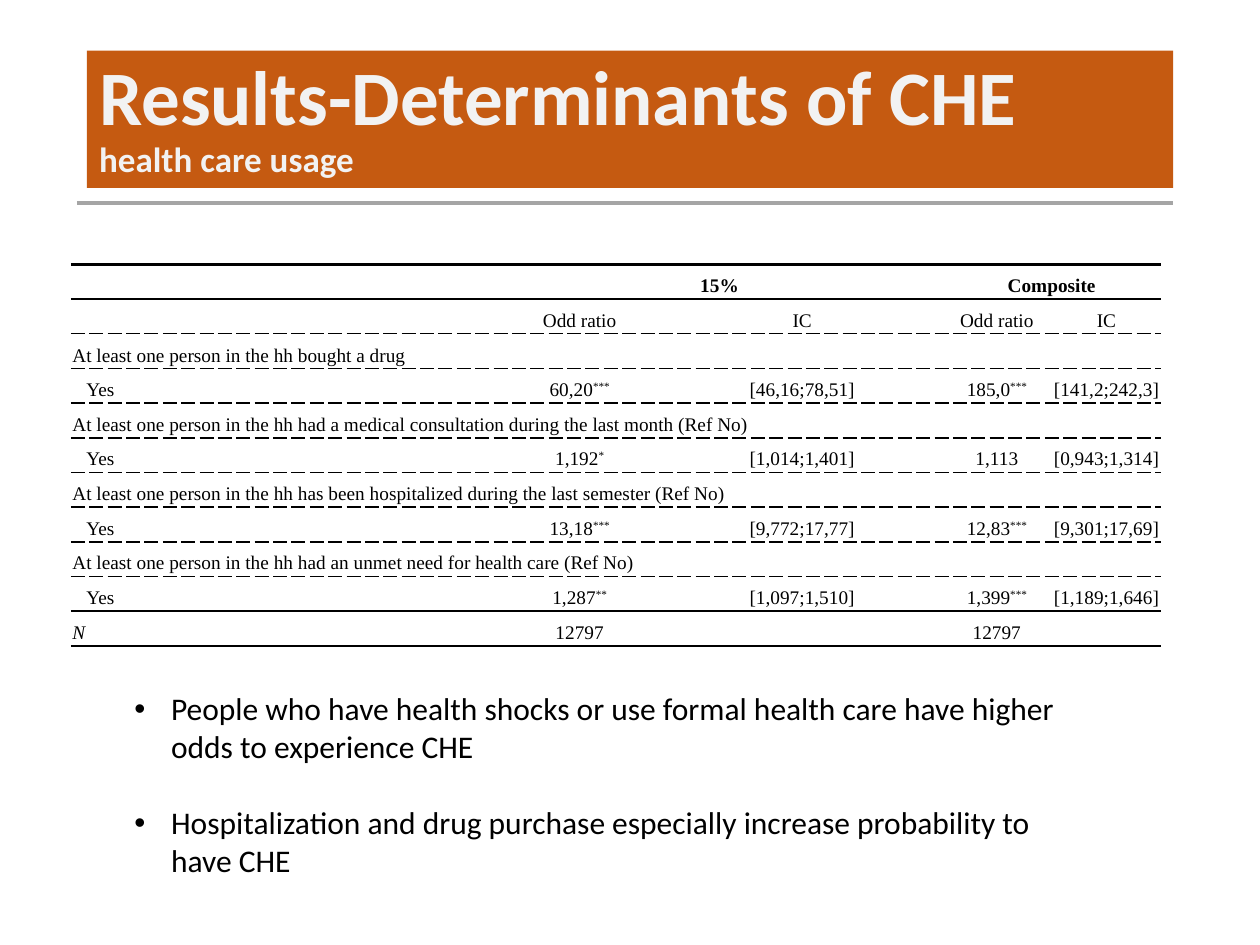
from lxml import etree
from pptx import Presentation
from pptx import util as u
from pptx.dml.color import RGBColor
from pptx.enum import shapes, text
from pptx.oxml import ns

COLORS = {"orange": "C55A11", "title": "F2F2F2", "rule": "A5A5A5", "ink": "000000"}


def style_font(font, size, name, color, bold=False):
    font.size = u.Pt(size)
    font.name = name
    font.bold = bold
    font.color.rgb = RGBColor.from_string(COLORS[color])


def add_border(cell, side, width, dash):
    properties = cell._tc.get_or_add_tcPr()
    line = etree.SubElement(properties, ns.qn(f"a:ln{side}"), w=str(u.Pt(width)))
    fill = etree.SubElement(line, ns.qn("a:solidFill"))
    etree.SubElement(fill, ns.qn("a:srgbClr"), val=COLORS["ink"])
    etree.SubElement(line, ns.qn("a:prstDash"), val=dash)


presentation = Presentation()
presentation.slide_width = u.Cm(25.4)
presentation.slide_height = u.Cm(19.05)
slide = presentation.slides.add_slide(presentation.slide_layouts[6])

# Rule under the title
rule = slide.shapes.add_connector(
    shapes.MSO_CONNECTOR.STRAIGHT, u.Cm(1.55), u.Cm(4.09), u.Cm(23.65), u.Cm(4.09))
rule.line.color.rgb = RGBColor.from_string(COLORS["rule"])
rule.line.width = u.Pt(2.25)
etree.SubElement(rule._element.spPr, ns.qn("a:effectLst"))

# Title band
title = slide.shapes.add_shape(
    shapes.MSO_SHAPE.RECTANGLE, u.Cm(1.75), u.Cm(1.02), u.Cm(21.9), u.Cm(2.77))
title.shadow.inherit = False
title.fill.solid()
title.fill.fore_color.rgb = RGBColor.from_string(COLORS["orange"])
title.line.fill.background()
title.text_frame.vertical_anchor = text.MSO_ANCHOR.MIDDLE
paragraph = title.text_frame.paragraphs[0]
paragraph.alignment = text.PP_ALIGN.LEFT
paragraph.line_spacing = 0.9
for words, size in [("Results-Determinants of CHE", 44), ("health care usage", 20)]:
    if paragraph.runs:
        paragraph.add_line_break()
    run = paragraph.add_run()
    run.text = words
    style_font(run.font, size, "Calibri", "title", bold=True)

# Table contents: stars after a number are raised
ROWS = [
    ["", "15%", "", "Composite", ""],
    ["", "Odd ratio", "IC", "Odd ratio", "IC"],
    ["At least one person in the hh bought a drug"],
    ["Yes", "60,20***", "[46,16;78,51]", "185,0***", "[141,2;242,3]"],
    ["At least one person in the hh had a medical consultation during the last month (Ref No)"],
    ["Yes", "1,192*", "[1,014;1,401]", "1,113", "[0,943;1,314]"],
    ["At least one person in the hh has been hospitalized during the last semester (Ref No)"],
    ["Yes", "13,18***", "[9,772;17,77]", "12,83***", "[9,301;17,69]"],
    ["At least one person in the hh had an unmet need for health care (Ref No)"],
    ["Yes", "1,287**", "[1,097;1,510]", "1,399***", "[1,189;1,646]"],
    ["N", "12797", "", "12797", ""],
]
COLUMN_WIDTHS = [8.59, 3.33, 5.64, 2.21, 2.21, 1.04]
ROW_HEIGHT = 0.7
DATA_COLUMNS = 5

# Horizontal rules, keyed by the row they stand above
RULES = {0: (2.25, "solid"), 1: (1, "solid"), 10: (1, "solid"), 11: (1, "solid")}
RULES.update({row: (1, "dash") for row in (2, 4, 6, 8)})

frame = slide.shapes.add_table(
    len(ROWS), len(COLUMN_WIDTHS), u.Cm(1.43), u.Cm(5.33),
    u.Cm(sum(COLUMN_WIDTHS)), u.Cm(ROW_HEIGHT * len(ROWS)))
table = frame.table
table.first_row = False
table.horz_banding = False
# "No Style, No Grid"
table._tbl.tblPr.find(ns.qn("a:tableStyleId")).text = "{2D5ABB26-0587-4C30-8999-92F81FD0307C}"
for column, width in zip(table.columns, COLUMN_WIDTHS):
    column.width = u.Cm(width)
for row in table.rows:
    row.height = u.Cm(ROW_HEIGHT)

# Header groups and full-width questions
for first in (1, 3):
    table.cell(0, first).merge(table.cell(0, first + 1))
for row, values in enumerate(ROWS):
    if len(values) == 1:
        table.cell(row, 0).merge(table.cell(row, DATA_COLUMNS - 1))

# Cells
for row, values in enumerate(ROWS):
    for column in range(len(COLUMN_WIDTHS)):
        cell = table.cell(row, column)
        value = values[column] if column < len(values) else ""
        cell.margin_left = u.Cm(0.31 if value == "Yes" else 0.03)
        cell.margin_right = u.Cm(0.03)
        cell.margin_top = cell.margin_bottom = 0
        if row == 2:
            cell.vertical_anchor = text.MSO_ANCHOR.MIDDLE
        if column < DATA_COLUMNS:
            for side, edge in (("T", row), ("B", row + 1)):
                if edge in RULES:
                    add_border(cell, side, *RULES[edge])
        cell.fill.background()

        paragraph = cell.text_frame.paragraphs[0]
        paragraph.line_spacing = 1.5
        paragraph.alignment = text.PP_ALIGN.CENTER if column else text.PP_ALIGN.LEFT
        style_font(paragraph.font, 11, "Times New Roman", "ink", bold=row == 0)
        paragraph.font.italic = value == "N"
        number = value.rstrip("*")
        if number:
            paragraph.add_run().text = number
        if number != value:
            stars = paragraph.add_run()
            stars.text = value[len(number):]
            stars._r.get_or_add_rPr().set("baseline", "30000")

# Conclusions
BULLETS = [
    "People who have health shocks or use formal health care have higher odds to experience CHE",
    "Hospitalization and drug purchase especially increase probability to have CHE",
]
box = slide.shapes.add_textbox(u.Cm(2.46), u.Cm(13.77), u.Cm(19.69), u.Cm(4.11))
box.text_frame.word_wrap = True
box.text_frame.auto_size = text.MSO_AUTO_SIZE.SHAPE_TO_FIT_TEXT
for index, words in enumerate(BULLETS):
    paragraph = box.text_frame.paragraphs[0] if index == 0 else box.text_frame.add_paragraph()
    paragraph.text = words
    if index:
        paragraph.space_before = u.Pt(22)
    properties = paragraph._p.get_or_add_pPr()
    properties.set("marL", str(u.Cm(0.74)))
    properties.set("indent", str(-u.Cm(0.74)))
    etree.SubElement(properties, ns.qn("a:buFont"), typeface="Arial")
    etree.SubElement(properties, ns.qn("a:buChar"), char="•")
    style_font(paragraph.font, 18, "Calibri", "ink")

presentation.save("out.pptx")
